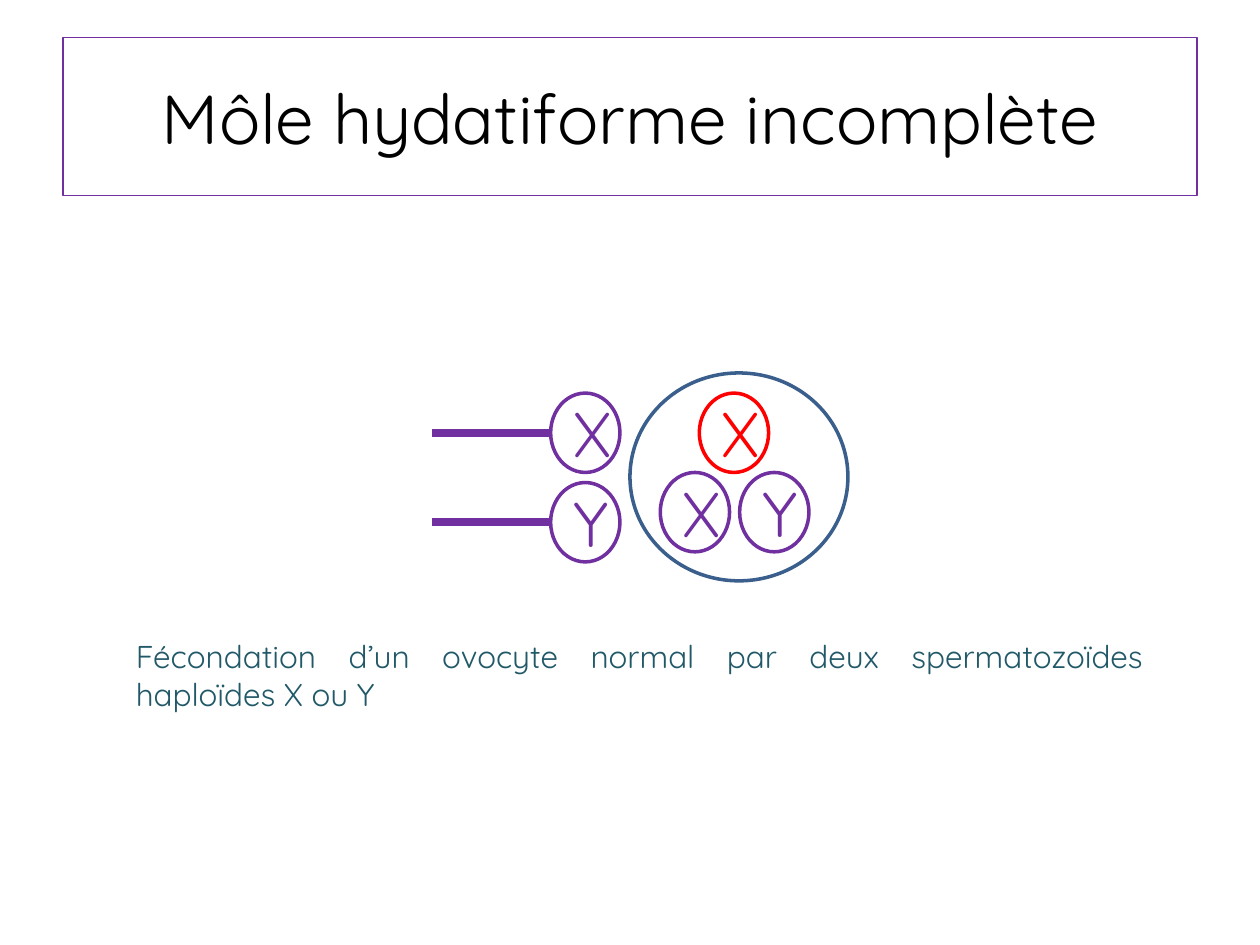
"""Build the slide on the partial hydatidiform mole."""
import pptx
import pptx.dml.color
import pptx.enum.shapes
import pptx.enum.text
import pptx.oxml.ns
import pptx.util
from lxml import etree

Inches = pptx.util.Inches
Pt = pptx.util.Pt
ALIGN = pptx.enum.text.PP_ALIGN
ANCHOR = pptx.enum.text.MSO_ANCHOR

PATERNAL = "7030A0"
MATERNAL = "FF0000"
CELL_WIDTH, CELL_HEIGHT = 0.55, 0.63
TAIL_START = 3.43
SPERM_LEFT = 4.37


def rgb(value):
    """Turn a hex string into a colour."""
    return pptx.dml.color.RGBColor.from_string(value)


class SlideBuilder:
    """Holds the style and the current slide."""

    font = "Quicksand"

    def __init__(self, slide):
        """Keep the slide to draw on."""
        self.slide = slide

    def add_text(self, frame, text, size, color, align):
        """Put one styled paragraph into a text frame."""
        frame.word_wrap = True
        paragraph = frame.paragraphs[0]
        paragraph.alignment = align
        run = paragraph.add_run()
        run.text = text
        run.font.name = self.font
        run.font.size = Pt(size)
        run.font.color.rgb = rgb(color)

    def outline(self, line, color, width):
        """Set the colour and width of a line."""
        line.color.rgb = rgb(color)
        line.width = Pt(width)

    def title(self, text, left, top, width, height):
        """Place the outlined title."""
        heading = self.slide.shapes.title
        heading.left, heading.top = Inches(left), Inches(top)
        heading.width, heading.height = Inches(width), Inches(height)
        self.outline(heading.line, PATERNAL, 0.75)
        frame = heading.text_frame
        frame.auto_size = pptx.enum.text.MSO_AUTO_SIZE.NONE
        frame.vertical_anchor = ANCHOR.MIDDLE
        self.add_text(frame, text, 39.6, "000000", ALIGN.CENTER)

    def ellipse(self, left, top, width, height, color):
        """Draw a white ellipse with a coloured outline."""
        oval = self.slide.shapes.add_shape(
            pptx.enum.shapes.MSO_SHAPE.OVAL,
            Inches(left), Inches(top), Inches(width), Inches(height))
        oval.shadow.inherit = False
        oval.fill.solid()
        oval.fill.fore_color.rgb = rgb("FFFFFF")
        self.outline(oval.line, color, 2)
        return oval

    def chromosome(self, letter, left, top, color=PATERNAL):
        """Draw a small cell labelled with its sex chromosome."""
        cell = self.ellipse(left, top, CELL_WIDTH, CELL_HEIGHT, color)
        cell.text_frame.vertical_anchor = ANCHOR.MIDDLE
        self.add_text(cell.text_frame, letter, 36, color, ALIGN.CENTER)

    def sperm(self, letter, top):
        """Draw a sperm head and its tail."""
        self.chromosome(letter, SPERM_LEFT, top)
        middle = Inches(top + CELL_HEIGHT / 2)
        tail = self.slide.shapes.add_connector(
            pptx.enum.shapes.MSO_CONNECTOR.STRAIGHT,
            Inches(TAIL_START), middle, Inches(SPERM_LEFT), middle)
        self.outline(tail.line, PATERNAL, 4.5)
        etree.SubElement(tail._element.spPr, pptx.oxml.ns.qn("a:effectLst"))

    def caption(self, text, left, top, width, height):
        """Place the justified explanation."""
        box = self.slide.shapes.add_textbox(
            Inches(left), Inches(top), Inches(width), Inches(height))
        box.text_frame.auto_size = pptx.enum.text.MSO_AUTO_SIZE.SHAPE_TO_FIT_TEXT
        self.add_text(box.text_frame, text, 18, "215968", ALIGN.JUSTIFY)


def main():
    """Build and save the presentation."""
    deck = pptx.Presentation()
    deck.slide_width, deck.slide_height = Inches(10), Inches(7.5)
    builder = SlideBuilder(deck.slides.add_slide(deck.slide_layouts[5]))

    builder.title("Môle hydatiforme incomplète", 0.5, 0.3, 9, 1.25)
    builder.ellipse(5, 2.96, 1.73, 1.65, "3A5F8C")
    builder.chromosome("X", 5.24, 3.75)
    builder.chromosome("Y", 5.87, 3.75)
    for letter, top in (("X", 3.12), ("Y", 3.83)):
        builder.sperm(letter, top)
    builder.caption(
        "Fécondation d’un ovocyte normal par deux spermatozoïdes haploïdes X ou Y",
        0.98, 5.01, 8.19, 0.71)
    builder.chromosome("X", 5.55, 3.12, MATERNAL)

    deck.save("out.pptx")


if __name__ == "__main__":
    main()
